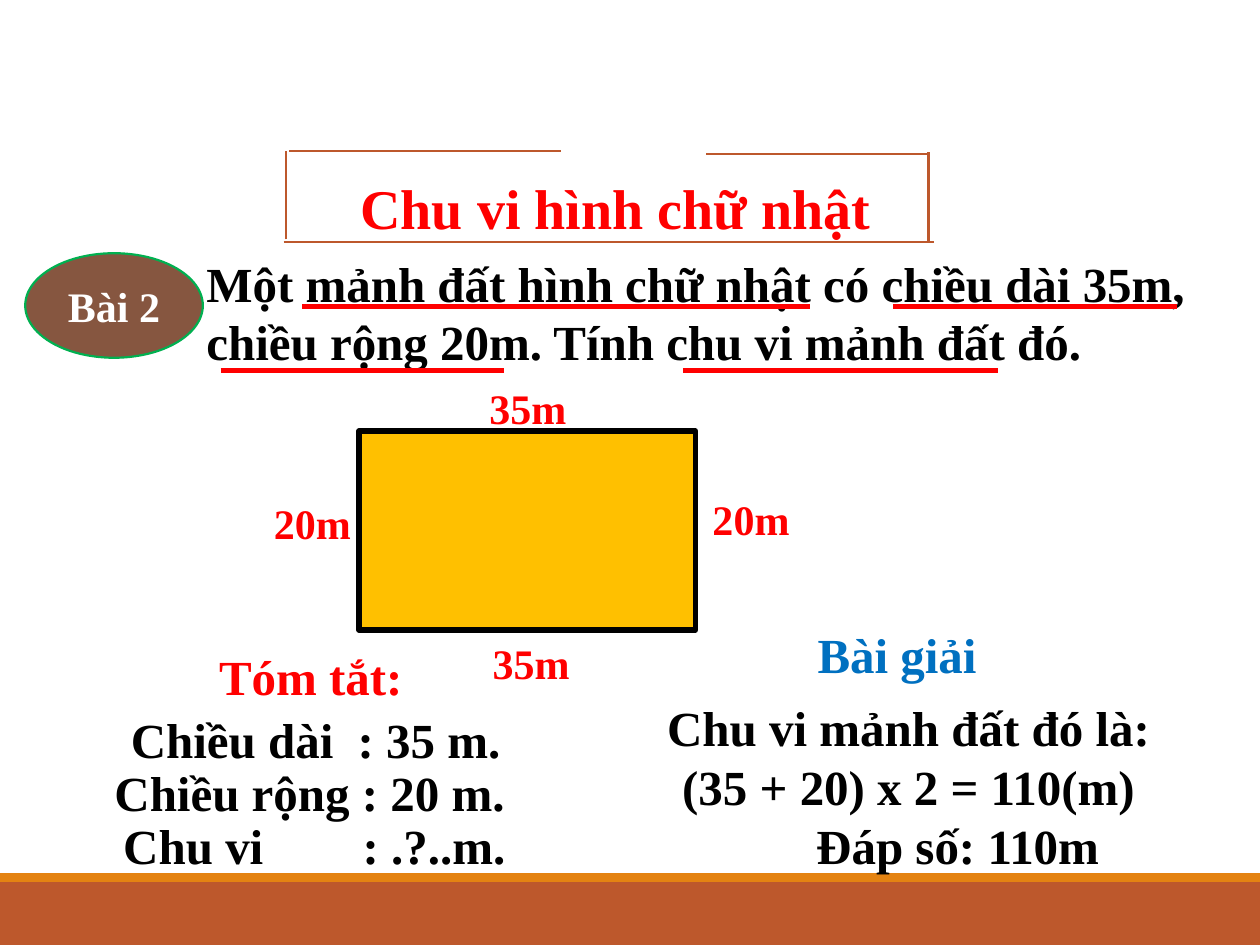
import pptx
import pptx.util
import pptx.dml.color
import pptx.enum.shapes
import pptx.enum.text
import lxml.etree

Inches = pptx.util.Inches
Pt = pptx.util.Pt
SHAPES = pptx.enum.shapes.MSO_SHAPE
ALIGN = pptx.enum.text.PP_ALIGN

THEME = {
    "font": "Times New Roman",
    "title": 32, "body": 28, "label": 24,
    "rust": "BD582C", "orange": "E48312", "red": "FF0000", "black": "000000",
    "white": "FFFFFF", "blue": "0070C0", "brown": "865640", "green": "00B050",
    "gold": "FFC000", "thin": 1.25, "thick": 3,
}

FOOTER_BARS = [((0, 7, 10, 0.5), "rust"), ((0, 6.93, 10, 0.07), "orange")]
TITLE_FRAME = [
    (2.25, 1.92, 7.41, 1.92),
    (2.27, 1.9, 2.27, 1.2),
    (7.37, 1.92, 7.37, 1.21),
    (7.38, 1.22, 5.6, 1.22),
    (4.45, 1.2, 2.29, 1.2),
]
TITLE = ("Chu vi hình chữ nhật", (1.83, 1.33, 6.11, 0.64))
BADGE = ("Bài 2", (0.2, 2.01, 1.41, 0.83))
PROBLEM = (
    "Một mảnh đất hình chữ nhật có chiều dài 35m, "
    "chiều rộng 20m. Tính chu vi mảnh đất đó.",
    (1.54, 1.96, 8.33, 1.04),
)
UNDERLINES = {2.43: [(2.4, 6.43), (7.09, 9.34)], 2.94: [(1.75, 4), (5.42, 7.92)]}
LAND = (2.85, 3.42, 2.67, 1.58)
SIDE_LABELS = [
    ("35m", (3.41, 2.99, 1.56, 0.51)),
    ("20m", (5.25, 3.87, 1.42, 0.51)),
    ("20m", (1.78, 3.9, 1.4, 0.51)),
    ("35m", (3.44, 5.01, 1.55, 0.51)),
]
HEADINGS = [
    ("Tóm tắt:", (1.64, 5.08, 1.68, 0.57), "red"),
    ("Bài giải", (6.39, 4.91, 1.48, 0.57), "blue"),
]
SUMMARY = [
    ("Chiều dài\t: 35 m.", (0.94, 5.58, 3.23, 0.57), 1.8),
    ("Chiều rộng : 20 m.", (0.81, 6, 3.48, 0.57), None),
    ("Chu vi\t: .?..m.", (0.88, 6.42, 3.26, 0.57), 1.9),
]
SOLUTION = (
    ["Chu vi mảnh đất đó là:", "(35 + 20) x 2 = 110(m)", "Đáp số: 110m"],
    (5.17, 5.49, 4.08, 1.51),
)
ANSWER_INDENT = 0.78

deck = pptx.Presentation()
deck.slide_width, deck.slide_height = Inches(10), Inches(7.5)
slide = deck.slides.add_slide(deck.slide_layouts[6])


def color(name):
    return pptx.dml.color.RGBColor.from_string(THEME[name])


def apply(target, values):
    for attribute, value in values.items():
        setattr(target, attribute, value)


def write(frame, lines, size, ink, align=ALIGN.LEFT, before=0):
    apply(frame, {"word_wrap": True})
    for index, line in enumerate(lines):
        paragraph = frame.add_paragraph() if index else frame.paragraphs[0]
        apply(paragraph, {"alignment": align, "space_before": Pt(before)})
        run = paragraph.add_run()
        run.text = line
        apply(run.font, {"name": THEME["font"], "size": Pt(THEME[size]), "bold": True})
        run.font.color.rgb = color(ink)


def add_text(lines, box, size, ink, align=ALIGN.LEFT, before=0):
    frame = slide.shapes.add_textbox(*map(Inches, box)).text_frame
    write(frame, lines, size, ink, align, before)
    frame.auto_size = pptx.enum.text.MSO_AUTO_SIZE.SHAPE_TO_FIT_TEXT
    return frame


def add_shape(kind, box, fill, line=None, width="thin"):
    shape = slide.shapes.add_shape(kind, *map(Inches, box))
    shape.shadow.inherit = False
    shape.fill.solid()
    shape.fill.fore_color.rgb = color(fill)
    if line:
        shape.line.color.rgb = color(line)
        shape.line.width = Pt(THEME[width])
    else:
        shape.line.fill.background()
    return shape


def add_line(ends, ink, width):
    line = slide.shapes.add_connector(
        pptx.enum.shapes.MSO_CONNECTOR.STRAIGHT, *map(Inches, ends))
    line.line.color.rgb = color(ink)
    line.line.width = Pt(THEME[width])
    properties = line._element.spPr
    lxml.etree.SubElement(properties, pptx.oxml.ns.qn("a:effectLst"))


def add_tab_stop(paragraph, position):
    qn = pptx.oxml.ns.qn
    stops = lxml.etree.SubElement(paragraph._p.get_or_add_pPr(), qn("a:tabLst"))
    lxml.etree.SubElement(stops, qn("a:tab"), pos=str(Inches(position)), algn="l")


for box, fill in FOOTER_BARS:
    add_shape(SHAPES.RECTANGLE, box, fill)
for ends in TITLE_FRAME:
    add_line(ends, "rust", "thin")

title, box = TITLE
add_text([title], box, "title", "red", ALIGN.CENTER)

badge, box = BADGE
oval = add_shape(SHAPES.OVAL, box, "brown", "green")
write(oval.text_frame, [badge], "label", "white", ALIGN.CENTER)
oval.text_frame.vertical_anchor = pptx.enum.text.MSO_ANCHOR.MIDDLE

problem, box = PROBLEM
add_text([problem], box, "body", "black")

add_shape(SHAPES.RECTANGLE, LAND, "gold", "black", "thick")
for label, box in SIDE_LABELS:
    add_text([label], box, "label", "red", ALIGN.CENTER, before=2)
for heading, box, ink in HEADINGS:
    add_text([heading], box, "body", ink)

for row, box, stop in SUMMARY:
    frame = add_text([row], box, "body", "black")
    if stop:
        add_tab_stop(frame.paragraphs[0], stop)

steps, box = SOLUTION
solution = add_text(steps, box, "body", "black", ALIGN.CENTER)
solution.paragraphs[-1]._p.get_or_add_pPr().set("marL", str(Inches(ANSWER_INDENT)))

for y, spans in UNDERLINES.items():
    for start, end in spans:
        add_line((start, y, end, y), "red", "thick")

deck.save("out.pptx")
